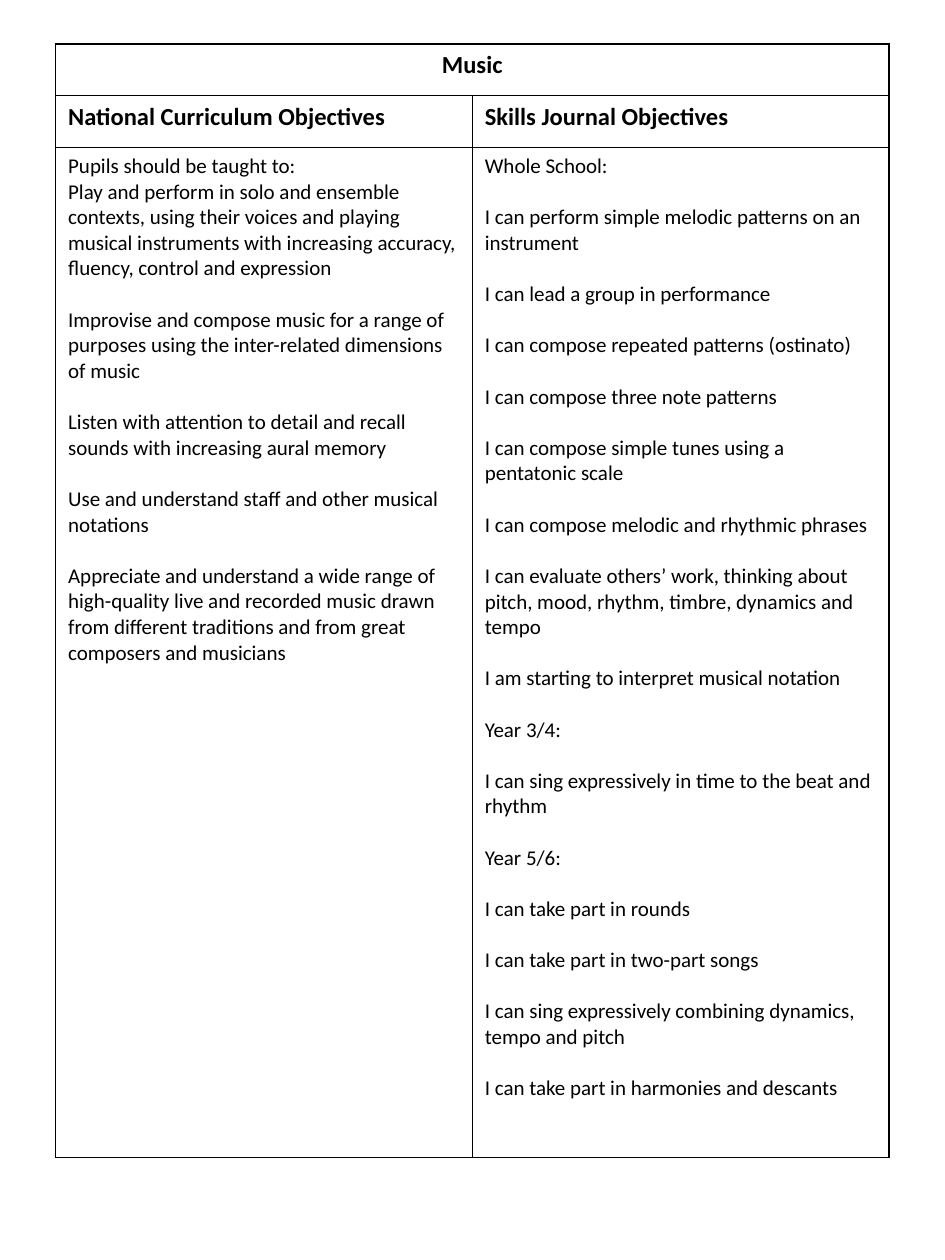
from lxml.etree import SubElement
from pptx import Presentation
from pptx.dml.color import RGBColor
from pptx.enum.text import PP_ALIGN
from pptx.oxml.ns import qn
from pptx.util import Cm, Pt

BLACK = RGBColor(0x00, 0x00, 0x00)
FONT = "Calibri"
GAP = Pt(14.65)
HEAD = Cm(1.04)

TITLE = "Music"
HEADS = ["National Curriculum Objectives", "Skills Journal Objectives"]
INTRO = "Pupils should be taught to:"
AIMS = [
    "Play and perform in solo and ensemble contexts, using their voices and playing "
    "musical instruments with increasing accuracy, fluency, control and expression",
    "Improvise and compose music for a range of purposes using the inter-related "
    "dimensions of music",
    "Listen with attention to detail and recall sounds with increasing aural memory",
    "Use and understand staff and other musical notations",
    "Appreciate and understand a wide range of high-quality live and recorded music "
    "drawn from different traditions and from great composers and musicians",
]
SKILLS = [
    "Whole School:",
    "I can perform simple melodic patterns on an instrument",
    "I can lead a group in performance",
    "I can compose repeated patterns (ostinato)",
    "I can compose three note patterns",
    "I can compose simple tunes using a pentatonic scale",
    "I can compose melodic and rhythmic phrases",
    "I can evaluate others’ work, thinking about pitch, mood, rhythm, timbre, "
    "dynamics and tempo",
    "I am starting to interpret musical notation",
    "Year 3/4:",
    "I can sing expressively in time to the beat and rhythm",
    "Year 5/6:",
    "I can take part in rounds",
    "I can take part in two-part songs",
    "I can sing expressively combining dynamics, tempo and pitch",
    "I can take part in harmonies and descants",
]


def rule_cell(cell):
    """Give a cell four black borders and no fill."""
    props = cell._tc.get_or_add_tcPr()
    for side in ("lnL", "lnR", "lnT", "lnB"):
        line = SubElement(props, qn(f"a:{side}"), w=str(Pt(1)))
        fill = SubElement(line, qn("a:solidFill"))
        SubElement(fill, qn("a:srgbClr"), val=str(BLACK))
    cell.fill.background()


def fill_cell(cell, lines, size, bold=False, align=PP_ALIGN.LEFT, tight=0):
    """Write lines in a cell, with a gap before each one except the tight one."""
    frame = cell.text_frame
    frame.text = "\n".join(lines)
    for i, para in enumerate(frame.paragraphs):
        para.alignment = align
        para.space_before = GAP if i > tight else Pt(0)
        for run in para.runs:
            font = run.font
            font.name, font.size, font.bold = FONT, Pt(size), bold
            font.color.rgb = BLACK


def add_goals(slide, left, top, width, height):
    """Place the table of objectives in the given box."""
    table = slide.shapes.add_table(3, 2, left, top, width, height).table
    for col in table.columns:
        col.width = width // 2
    for row, tall in zip(table.rows, (HEAD, HEAD, height - 2 * HEAD)):
        row.height = tall
    for cell in table.iter_cells():
        rule_cell(cell)
    table.cell(0, 0).merge(table.cell(0, 1))
    fill_cell(table.cell(0, 0), [TITLE], 14, True, PP_ALIGN.CENTER)
    for i, head in enumerate(HEADS):
        fill_cell(table.cell(1, i), [head], 14, True)
    fill_cell(table.cell(2, 0), [INTRO] + AIMS, 12, tight=1)
    fill_cell(table.cell(2, 1), SKILLS, 12)


def main():
    """Build the one-slide deck."""
    deck = Presentation()
    deck.slide_width, deck.slide_height = Cm(19.05), Cm(25.4)
    slide = deck.slides.add_slide(deck.slide_layouts[6])
    add_goals(slide, Cm(1.12), Cm(0.89), Cm(16.8), Cm(22.44))
    deck.save("out.pptx")


if __name__ == "__main__":
    main()
